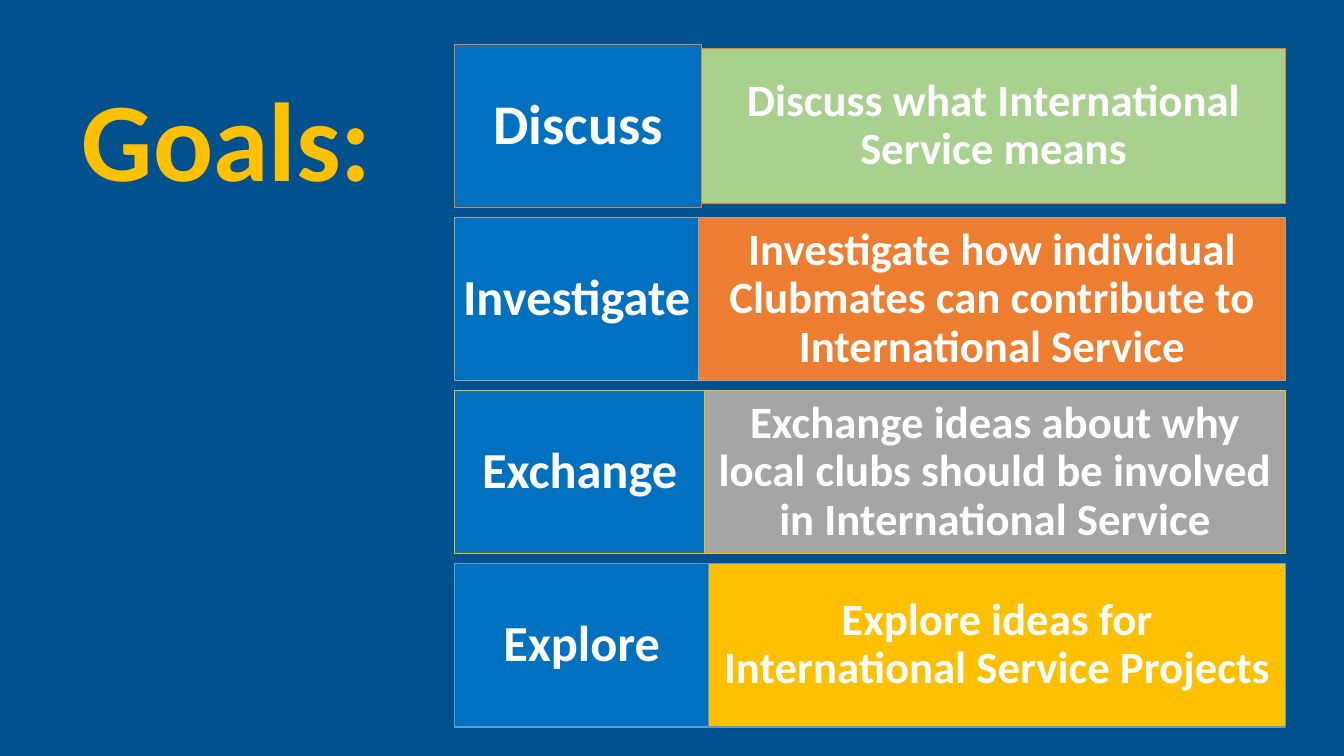
from pptx import Presentation
from pptx.dml.color import RGBColor
from pptx.enum.shapes import MSO_SHAPE as Shape
from pptx.enum.text import MSO_ANCHOR as Anchor, MSO_AUTO_SIZE as AutoSize, PP_ALIGN as Align
from pptx.util import Inches, Pt

NAVY = RGBColor(0x00, 0x51, 0x8E)
BLUE = RGBColor(0x00, 0x70, 0xC0)
SKY = RGBColor(0x5B, 0x9B, 0xD5)
GREEN = RGBColor(0xA9, 0xD1, 0x8E)
ORANGE = RGBColor(0xED, 0x7D, 0x31)
GRAY = RGBColor(0xA5, 0xA5, 0xA5)
GOLD = RGBColor(0xFF, 0xC0, 0x00)
WHITE = RGBColor(0xFF, 0xFF, 0xFF)

TITLE = "Goals:"
# verb, verb size, verb width, goal, goal fill, outline, goal inset from row top and bottom
GOALS = [
    ("Discuss", 40, 2.45, "Discuss what International Service means", GREEN, ORANGE, 0.04),
    ("Investigate", 36, 2.42,
     "Investigate how individual Clubmates can contribute to International Service",
     ORANGE, GRAY, 0),
    ("Exchange", 36, 2.48,
     "Exchange ideas about why local clubs should be involved in International Service",
     GRAY, GOLD, 0),
    ("Explore", 36, 2.52, "Explore ideas for International Service Projects", GOLD, SKY, 0),
]
LEFT, RIGHT, TOP = 4.51, 12.75, 0.44
ROW_HEIGHT, ROW_STEP = 1.62, 1.717


def style_text(frame, size, color, align):
    frame.word_wrap = True
    frame.auto_size = AutoSize.NONE
    frame.vertical_anchor = Anchor.MIDDLE
    para = frame.paragraphs[0]
    para.alignment = align
    para.line_spacing = 0.9
    para.font.name = "Calibri"
    para.font.size = Pt(size)
    para.font.bold = True
    para.font.color.rgb = color


def add_box(page, left, top, width, height, text, size, fill, outline, margin):
    box = page.shapes.add_shape(
        Shape.RECTANGLE, Inches(left), Inches(top), Inches(width), Inches(height))
    box.shadow.inherit = False
    box.fill.solid()
    box.fill.fore_color.rgb = fill
    box.line.color.rgb = outline
    box.line.width = Pt(1)
    frame = box.text_frame
    frame.text = text
    frame.margin_left = frame.margin_right = Inches(margin)
    style_text(frame, size, WHITE, Align.CENTER)


def main():
    deck = Presentation()
    deck.slide_width, deck.slide_height = Inches(13.33), Inches(7.5)
    page = deck.slides.add_slide(deck.slide_layouts[5])
    page.background.fill.solid()
    page.background.fill.fore_color.rgb = NAVY

    title = page.shapes.title
    title.left, title.top = Inches(0.58), Inches(0.84)
    title.width, title.height = Inches(3.21), Inches(1.2)
    title.text_frame.text = TITLE
    style_text(title.text_frame, 80, GOLD, Align.RIGHT)

    for row, (verb, size, width, goal, fill, outline, inset) in enumerate(GOALS):
        top = TOP + row * ROW_STEP
        split = LEFT + width
        add_box(page, split, top + inset, RIGHT - split, ROW_HEIGHT - 2 * inset,
                goal, 32, fill, outline, 0.11)
        add_box(page, LEFT, top, width, ROW_HEIGHT, verb, size, BLUE, outline, 0.07)

    deck.save("out.pptx")


if __name__ == "__main__":
    main()
